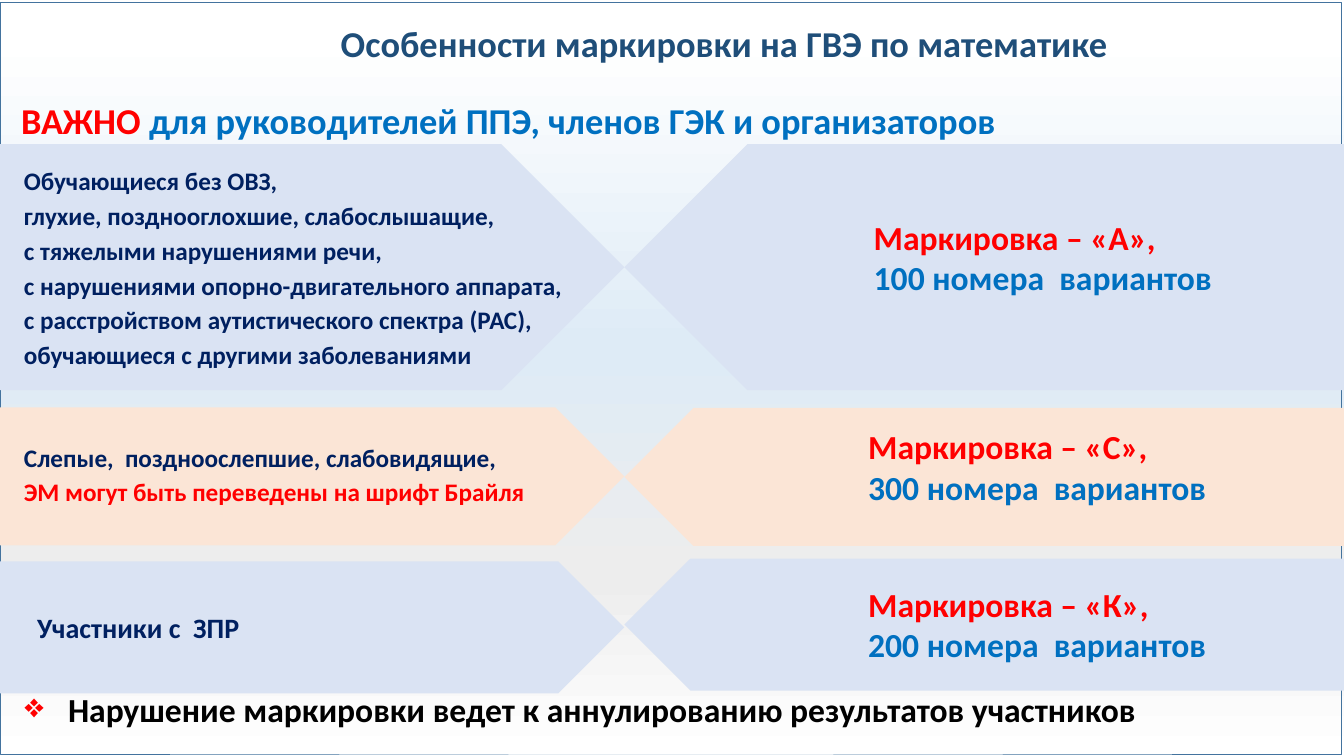
from dataclasses import dataclass
from typing import Any

from lxml import etree
from pptx import Presentation
from pptx import util as u
from pptx.dml.color import RGBColor
from pptx.enum import shapes, text
from pptx.oxml import ns

COLOURS = {
    "navy": "002060",
    "heading": "1F4E79",
    "red": "FF0000",
    "blue": "0070C0",
    "black": "000000",
    "frame": "43739E",
    "pale_blue": "DAE3F3",
    "pale_orange": "FBE5D6",
}
BACKDROP = ((5, "FFFFFF"), (46, "DEEBF6"), (76, "EDEDED"), (100, "FFFFFF"))
WIDTH, HEIGHT = 960, 540
TIP = 446


@dataclass
class Span:
    wording: str
    colour: str


@dataclass
class Words:
    left: float
    top: float
    width: float
    height: float
    size: float
    lines: list[list[Span]]
    spacing: float = 1.0
    heading: bool = False
    indent: float = 0
    bullet: str = ""


@dataclass
class Band:
    left_top: float
    right_top: float
    height: float
    fill: str
    group: Words
    mark_left: float
    mark_top: float
    letter: str
    hundreds: int


def colour(name: str) -> RGBColor:
    return RGBColor.from_string(COLOURS[name])


def apply(target: Any, values: dict[str, Any]) -> None:
    for name, value in values.items():
        setattr(target, name, value)


def paint_backdrop(page: Any) -> None:
    fill = page.background.fill
    fill.gradient()
    fill.gradient_angle = 270
    stops = page._element.find(".//" + ns.qn("a:gsLst"))
    for stop in list(stops):
        stops.remove(stop)
    for position, value in BACKDROP:
        stop = etree.SubElement(stops, ns.qn("a:gs"), pos=str(position * 1000))
        etree.SubElement(stop, ns.qn("a:srgbClr"), val=value)


def add_frame(page: Any) -> None:
    frame = page.shapes.add_shape(
        shapes.MSO_SHAPE.RECTANGLE, u.Pt(0), u.Pt(1.4), u.Pt(958.3), u.Pt(537.1))
    frame.shadow.inherit = False
    frame.fill.background()
    frame.line.color.rgb = colour("frame")
    frame.line.width = u.Pt(0.25)


def add_arrow(page: Any, left: float, top: float, width: float, height: float,
              fill: str, flipped: bool) -> None:
    arrow = page.shapes.add_shape(
        shapes.MSO_SHAPE.PENTAGON, u.Pt(left), u.Pt(top), u.Pt(width), u.Pt(height))
    arrow.shadow.inherit = False
    arrow.fill.solid()
    arrow.fill.fore_color.rgb = colour(fill)
    arrow.line.fill.background()
    if flipped:
        arrow._element.spPr.find(ns.qn("a:xfrm")).set("flipH", "1")


def add_words(page: Any, words: Words) -> None:
    box = page.shapes.add_textbox(
        u.Pt(words.left), u.Pt(words.top), u.Pt(words.width), u.Pt(words.height))
    frame = box.text_frame
    frame_format: dict[str, Any] = {"word_wrap": True}
    para_format: dict[str, Any] = {"line_spacing": words.spacing}
    if words.heading:
        margins = ("margin_left", "margin_top", "margin_right", "margin_bottom")
        frame_format |= dict.fromkeys(margins, u.Pt(3))
        frame_format["vertical_anchor"] = text.MSO_ANCHOR.MIDDLE
        para_format["alignment"] = text.PP_ALIGN.CENTER
    apply(frame, frame_format)
    for index, line in enumerate(words.lines):
        para = frame.paragraphs[0] if index == 0 else frame.add_paragraph()
        apply(para, para_format)
        if words.indent:
            para._p.get_or_add_pPr().set("marL", str(u.Pt(words.indent)))
        if words.bullet:
            add_bullet(para, words)
        for piece in line:
            span = para.add_run()
            span.text = piece.wording
            apply(span.font, {"name": "Calibri", "size": u.Pt(words.size), "bold": True})
            span.font.color.rgb = colour(piece.colour)


def add_bullet(para: Any, words: Words) -> None:
    settings = para._p.get_or_add_pPr()
    settings.set("indent", str(-u.Pt(words.indent)))
    tint = etree.SubElement(settings, ns.qn("a:buClr"))
    etree.SubElement(tint, ns.qn("a:srgbClr"), val=COLOURS["red"])
    etree.SubElement(settings, ns.qn("a:buChar"), char=words.bullet)


def add_band(page: Any, band: Band) -> None:
    add_arrow(page, 0, band.left_top, TIP, band.height, band.fill, False)
    add_arrow(page, TIP, band.right_top, WIDTH - TIP, band.height, band.fill, True)
    add_words(page, band.group)
    add_words(page, Words(band.mark_left, band.mark_top, 370, 65.4, 24, [
        [Span(f"Маркировка – «{band.letter}»,", "red")],
        [Span(f"{band.hundreds}00 номера  вариантов", "blue")],
    ], indent=28))


HEADINGS = [
    Words(94.3, 0, 846.7, 65.5, 26,
          [[Span("Особенности маркировки на ГВЭ по математике", "heading")]],
          spacing=0.9, heading=True),
    Words(0, 54.7, 727, 65.5, 26,
          [[Span("ВАЖНО", "red"),
            Span(" для руководителей ППЭ, членов ГЭК и организаторов", "blue")]],
          spacing=0.9, heading=True),
    Words(0.6, 477.5, 828, 62, 24,
          [[Span("Нарушение маркировки ведет к аннулированию результатов участников",
                 "black")]],
          spacing=0.9, heading=True, indent=31, bullet="❖"),
]
PUPILS = (
    "Обучающиеся без ОВЗ,",
    "глухие, позднооглохшие, слабослышащие,",
    "с тяжелыми нарушениями речи,",
    "с нарушениями опорно-двигательного аппарата,",
    "с расстройством аутистического спектра (РАС),",
    "обучающиеся с другими заболеваниями",
)
BANDS = [
    Band(103, 103, 175.7, "pale_blue",
         Words(10, 111.6, 410, 157.7, 18,
               [[Span(pupil, "navy")] for pupil in PUPILS], 1.15),
         589, 151.2, "А", 1),
    Band(291, 291.4, 98.6, "pale_orange",
         Words(10, 308.9, 422, 57.6, 18, [
             [Span("Слепые,  поздноослепшие, слабовидящие,", "navy")],
             [Span("ЭМ могут быть переведены на шрифт Брайля", "red")],
         ], 1.15),
         585, 301, "С", 3),
    Band(401, 399, 94.3, "pale_blue",
         Words(19.4, 429.1, 228, 35.3, 20,
               [[Span("Участники с  ЗПР", "navy")]], 1.15),
         585, 413.3, "К", 2),
]


def main() -> None:
    deck = Presentation()
    apply(deck, {"slide_width": u.Pt(WIDTH), "slide_height": u.Pt(HEIGHT)})
    page = deck.slides.add_slide(deck.slide_layouts[6])
    paint_backdrop(page)
    add_frame(page)
    for band in BANDS:
        add_band(page, band)
    for heading in HEADINGS:
        add_words(page, heading)
    deck.save("out.pptx")


if __name__ == "__main__":
    main()
